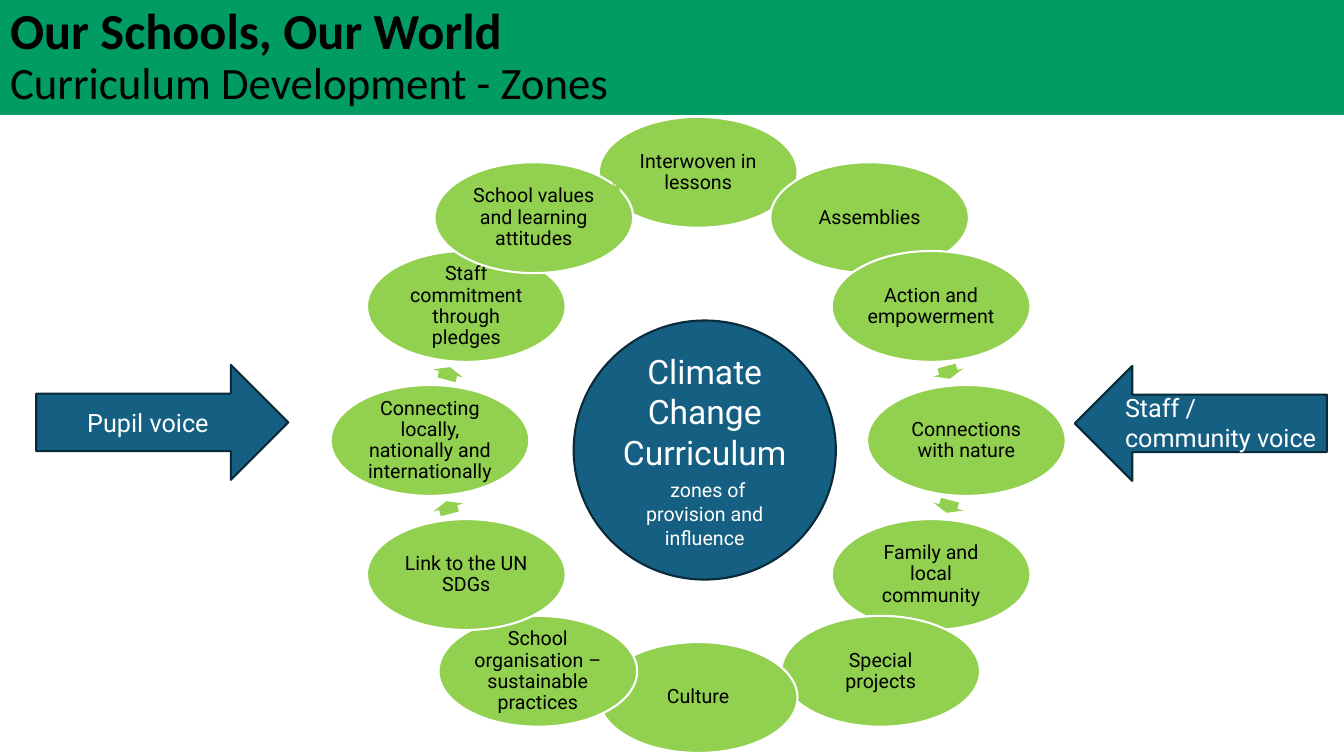
from dataclasses import dataclass
from pptx import Presentation
from pptx.dml.color import RGBColor
from pptx.enum.shapes import MSO_SHAPE
from pptx.enum.text import MSO_ANCHOR, MSO_AUTO_SIZE, PP_ALIGN
from pptx.util import Inches, Pt


@dataclass(frozen=True)
class Theme:
    banner: str = "009C64"
    zone: str = "92D050"
    core: str = "156082"
    core_line: str = "092A39"
    light: str = "FFFFFF"
    dark: str = "000000"
    title_font: str = "Calibri"
    body_font: str = "Roboto"
    title_size: int = 36
    subtitle_size: int = 32
    core_size: int = 24
    voice_size: int = 18
    zone_size: int = 14


theme = Theme()


def add_run(paragraph, text, size, color, font=theme.body_font, bold=False):
    run = paragraph.add_run()
    run.text = text
    run.font.name = font
    run.font.size = Pt(size)
    run.font.bold = bold
    run.font.color.rgb = RGBColor.from_string(color)


def add_filled_shape(kind, left, top, width, height, fill, line=None, rotation=0):
    shape = slide.shapes.add_shape(kind, Inches(left), Inches(top), Inches(width), Inches(height))
    shape.shadow.inherit = False
    shape.rotation = rotation
    shape.fill.solid()
    shape.fill.fore_color.rgb = RGBColor.from_string(fill)
    if line:
        shape.line.color.rgb = RGBColor.from_string(line)
        shape.line.width = Pt(1.5)
    else:
        shape.line.fill.background()
    shape.text_frame.word_wrap = True
    shape.text_frame.paragraphs[0].alignment = PP_ALIGN.CENTER
    return shape


presentation = Presentation()
presentation.slide_width = Inches(13.33)
presentation.slide_height = Inches(7.5)
slide = presentation.slides.add_slide(presentation.slide_layouts[5])

title = slide.shapes.title
title.left, title.top = Inches(0), Inches(0)
title.width, title.height = Inches(13.33), Inches(1.14)
title.fill.solid()
title.fill.fore_color.rgb = RGBColor.from_string(theme.banner)
title.text_frame.auto_size = MSO_AUTO_SIZE.NONE
title.text_frame.vertical_anchor = MSO_ANCHOR.MIDDLE
paragraph = title.text_frame.paragraphs[0]
paragraph.alignment = PP_ALIGN.LEFT
paragraph.line_spacing = 0.9
add_run(paragraph, "Our Schools, Our World", theme.title_size, theme.dark, theme.title_font, True)
paragraph.add_line_break()
add_run(paragraph, "Curriculum Development - Zones", theme.subtitle_size, theme.dark, theme.title_font)

ZONE_WIDTH, ZONE_HEIGHT, ARROW_HEIGHT = 1.97, 1.1, 0.31
zones = [
    ("Interwoven in lessons", 5.94, 1.16, (7.76, 1.78, 0.04, 194.8)),
    ("Assemblies", 7.64, 1.61, (8.88, 2.45, 0.1, 235.6)),
    ("Action and empowerment", 8.25, 2.49, (9.34, 3.54, 0.13, 75)),
    ("Connections with nature", 8.6, 3.82, (9.34, 4.87, 0.13, 105)),
    ("Family and local community", 8.25, 5.15, (8.95, 6.02, 0.06, 297.2)),
    ("Special projects", 7.75, 6.11, (7.81, 6.64, 0.05, 351.7)),
    ("Culture", 5.94, 6.37, (6.05, 6.63, 0.16, 9.5)),
    ("School organisation – sustainable practices", 4.35, 6.11, (4.96, 6.02, 0.04, 53.4)),
    ("Link to the UN SDGs", 3.64, 5.15, (4.38, 4.88, 0.13, 255)),
    ("Connecting locally, nationally and internationally", 3.28, 3.82, (4.38, 3.55, 0.13, 285)),
    ("Staff commitment through pledges", 3.64, 2.49, (4.92, 2.44, 0.09, 127.5)),
    ("School values and learning attitudes", 4.31, 1.61, (6.08, 1.78, 0.08, 164.6)),
]
for name, left, top, (arrow_left, arrow_top, arrow_width, angle) in zones:
    zone = add_filled_shape(MSO_SHAPE.OVAL, left, top, ZONE_WIDTH, ZONE_HEIGHT, theme.zone, theme.light)
    frame = zone.text_frame
    frame.margin_left = frame.margin_right = frame.margin_top = frame.margin_bottom = Inches(0.02)
    frame.paragraphs[0].line_spacing = 0.9
    add_run(frame.paragraphs[0], name, theme.zone_size, theme.dark)
    arrow = add_filled_shape(MSO_SHAPE.RIGHT_ARROW, arrow_left, arrow_top, arrow_width, ARROW_HEIGHT,
                             theme.zone, rotation=angle)
    arrow.adjustments[0] = 0.6
    arrow.adjustments[1] = 0.5

core = add_filled_shape(MSO_SHAPE.OVAL, 5.69, 3.18, 2.6, 2.57, theme.core, theme.core_line)
paragraph = core.text_frame.paragraphs[0]
for text, size in [
    ("Climate Change Curriculum ", theme.core_size),
    (" ", theme.voice_size),
    ("zones of provision and influence", theme.zone_size),
]:
    add_run(paragraph, text, size, theme.light)

pupil_arrow = add_filled_shape(MSO_SHAPE.RIGHT_ARROW, 0.36, 3.62, 2.5, 1.14, theme.core, theme.core_line)
add_run(pupil_arrow.text_frame.paragraphs[0], "Pupil voice", theme.voice_size, theme.light)

add_filled_shape(MSO_SHAPE.RIGHT_ARROW, 10.66, 3.63, 2.5, 1.14, theme.core, theme.core_line, 180)
staff_label = slide.shapes.add_textbox(Inches(11.06), Inches(3.84), Inches(2.19), Inches(0.71))
staff_label.text_frame.word_wrap = True
add_run(staff_label.text_frame.paragraphs[0], "Staff / community voice", theme.voice_size, theme.light)

presentation.save("out.pptx")
